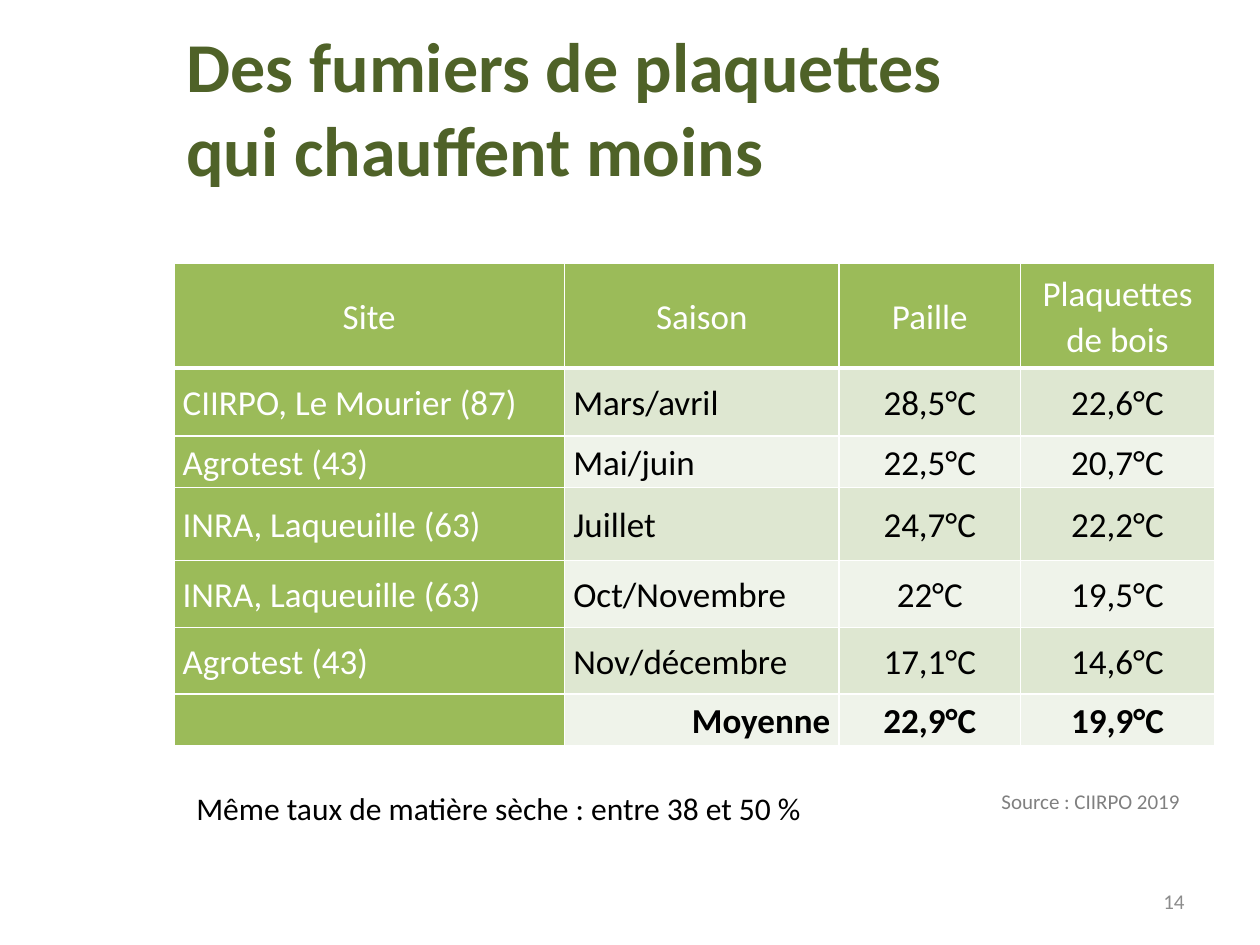
from dataclasses import dataclass

from lxml.etree import SubElement
from pptx import Presentation
from pptx.dml.color import RGBColor
from pptx.enum.text import MSO_ANCHOR as Anchor, MSO_AUTO_SIZE as AutoSize, PP_ALIGN as Align
from pptx.oxml.ns import qn
from pptx.util import Inches, Pt


@dataclass(frozen=True)
class Theme:
    font: str = "Calibri"
    title: str = "4F6228"
    green: str = "9BBB59"
    bands: tuple = ("DEE7D1", "EFF3EA")
    white: str = "FFFFFF"
    black: str = "000000"
    source: str = "808080"
    number: str = "8C8C8C"
    title_size: int = 40
    table_size: int = 20
    note_size: int = 18
    small_size: int = 12


@dataclass(frozen=True)
class Label:
    text: str
    left: float
    top: float
    width: float
    height: float
    size: int
    color: str
    align: Align = Align.LEFT
    anchor: Anchor = Anchor.TOP


THEME = Theme()

COLUMNS = (3.1, 2.18, 1.44, 1.54)
ROWS = (0.83, 0.54, 0.41, 0.58, 0.53, 0.53, 0.41)
READINGS = (
    ("Site", "Saison", "Paille", "Plaquettes de bois"),
    ("CIIRPO, Le Mourier (87)", "Mars/avril", "28,5°C", "22,6°C"),
    ("Agrotest (43)", "Mai/juin", "22,5°C", "20,7°C"),
    ("INRA, Laqueuille (63)", "Juillet", "24,7°C", "22,2°C"),
    ("INRA, Laqueuille (63)", "Oct/Novembre", "22°C", "19,5°C"),
    ("Agrotest (43)", "Nov/décembre", "17,1°C", "14,6°C"),
    ("", "Moyenne", "22,9°C", "19,9°C"),
)
LABELS = (
    Label("Même taux de matière sèche : entre 38 et 50 %", 1.46, 6.21, 5.19, 0.4,
          THEME.note_size, THEME.black),
    Label("Source : CIIRPO 2019", 7.85, 6.21, 2.43, 0.3, THEME.small_size, THEME.source),
    Label("14", 7.17, 6.95, 2.33, 0.4, THEME.small_size, THEME.number,
          Align.RIGHT, Anchor.MIDDLE),
)


def apply(target, values: dict) -> None:
    for name, value in values.items():
        setattr(target, name, value)


def write(para, text: str, size: int, color: str, bold: bool = False) -> None:
    span = para.add_run()
    span.text = text
    apply(span.font, {"name": THEME.font, "size": Pt(size), "bold": bold})
    span.font.color.rgb = RGBColor.from_string(color)


def add_label(page, label: Label) -> None:
    box = page.shapes.add_textbox(*map(Inches, (label.left, label.top, label.width, label.height)))
    apply(box.text_frame, {"word_wrap": True, "vertical_anchor": label.anchor})
    para = box.text_frame.paragraphs[0]
    para.alignment = label.align
    write(para, label.text, label.size, label.color)


def add_borders(cell, bottom: int) -> None:
    properties = cell._tc.get_or_add_tcPr()
    for side, width in {"L": 1, "R": 1, "T": 1, "B": bottom}.items():
        line = SubElement(properties, qn(f"a:ln{side}"), w=str(Pt(width)))
        fill = SubElement(line, qn("a:solidFill"))
        SubElement(fill, qn("a:srgbClr"), val=THEME.white)


def format_cell(cell, text: str, row: int, column: int) -> None:
    is_header, is_average = row == 0, row == len(READINGS) - 1
    on_green = is_header or column == 0
    add_borders(cell, 3 if is_header else 1)
    cell.fill.solid()
    cell.fill.fore_color.rgb = RGBColor.from_string(
        THEME.green if on_green else THEME.bands[(row - 1) % 2])
    apply(cell, {"margin_left": Inches(0.07), "margin_right": Inches(0.07),
                 "margin_top": 0, "margin_bottom": 0, "vertical_anchor": Anchor.MIDDLE})
    para = cell.text_frame.paragraphs[0]
    if is_header or column > 1:
        align = Align.CENTER
    else:
        align = Align.RIGHT if is_average else Align.LEFT
    apply(para, {"alignment": align, "line_spacing": 1.07})
    if text:
        write(para, text, THEME.table_size, THEME.white if on_green else THEME.black, is_average)


def add_readings(page) -> None:
    frame = page.shapes.add_table(len(ROWS), len(COLUMNS), Inches(1.38), Inches(2.09),
                                  Inches(sum(COLUMNS)), Inches(sum(ROWS)))
    table = frame.table
    for column, width in zip(table.columns, COLUMNS):
        column.width = Inches(width)
    for row, height in zip(table.rows, ROWS):
        row.height = Inches(height)
    for row, texts in enumerate(READINGS):
        for column, text in enumerate(texts):
            format_cell(table.cell(row, column), text, row, column)


def add_title(page, text: str) -> None:
    title = page.shapes.title
    apply(title, {"left": Inches(1.38), "top": Inches(0.29),
                  "width": Inches(6.47), "height": Inches(1.11)})
    apply(title.text_frame, {"word_wrap": True, "auto_size": AutoSize.NONE,
                             "vertical_anchor": Anchor.MIDDLE})
    para = title.text_frame.paragraphs[0]
    para.alignment = Align.LEFT
    write(para, text, THEME.title_size, THEME.title, True)


def main() -> None:
    deck = Presentation()
    apply(deck, {"slide_width": Inches(10), "slide_height": Inches(7.5)})
    page = deck.slides.add_slide(deck.slide_layouts[5])

    # Title, temperature table, then notes and page number
    add_title(page, "Des fumiers de plaquettes qui chauffent moins")
    add_readings(page)
    for label in LABELS:
        add_label(page, label)

    deck.save("out.pptx")


if __name__ == "__main__":
    main()
